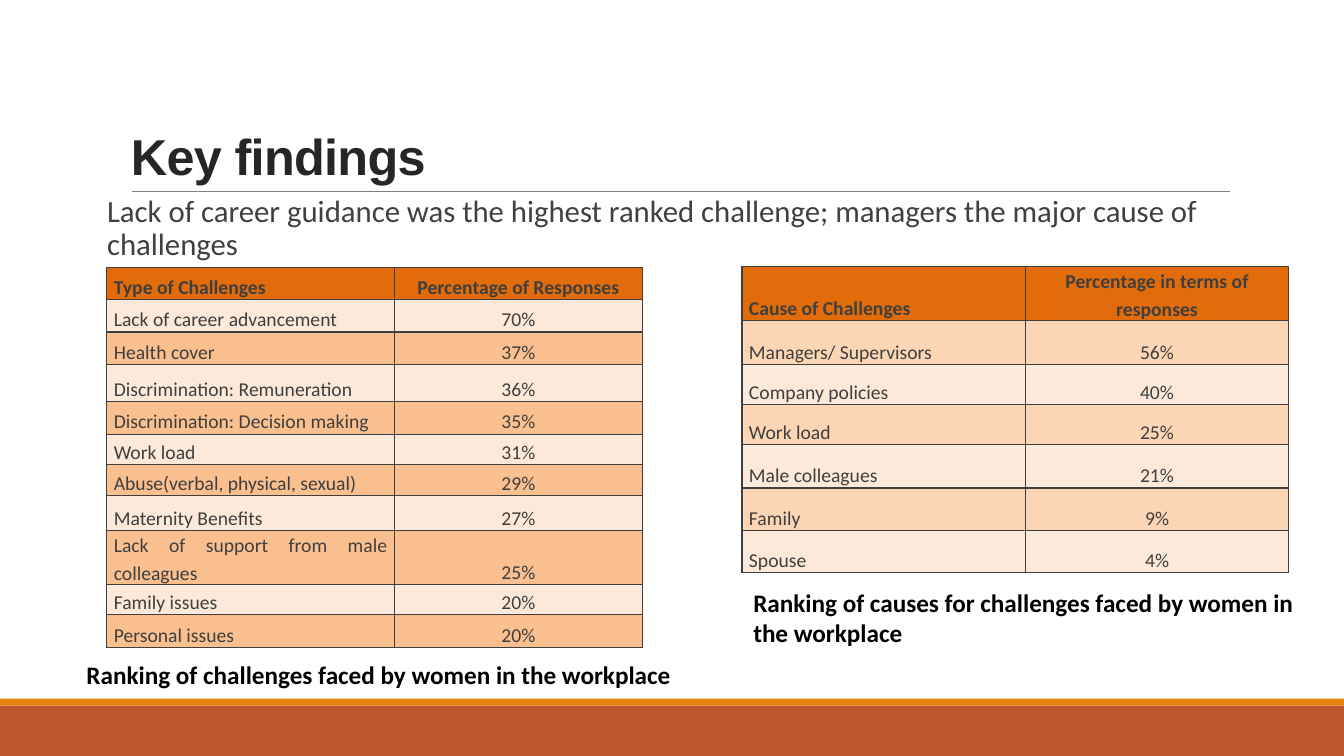
from dataclasses import dataclass

from lxml import etree
from pptx import Presentation
from pptx.dml.color import RGBColor
from pptx.enum.shapes import MSO_CONNECTOR, MSO_SHAPE
from pptx.enum.text import MSO_ANCHOR as ANCHOR, PP_ALIGN as ALIGN
from pptx.oxml.ns import qn
from pptx.util import Pt


@dataclass(frozen=True)
class Theme:
    heading_font: str = "Arial"
    body_font: str = "Calibri"
    title_size: float = 36
    lead_size: float = 22
    caption_size: float = 18
    cell_size: float = 14
    title: str = "262626"
    lead: str = "404040"
    caption: str = "000000"
    cell: str = "3F3F3F"
    rule: str = "808080"
    footer: str = "BD582C"
    accent: str = "E48312"
    header: str = "E26B0A"
    pale: str = "FDE9D9"
    peach: str = "FCD5B4"
    orange: str = "FABF8F"


THEME = Theme()
WIDTH, HEIGHT = 960, 540

CHALLENGES = [
    ("Type of Challenges", "Percentage of Responses", 23),
    ("Lack of career advancement", "70%", 23),
    ("Health cover", "37%", 23),
    ("Discrimination: Remuneration", "36%", 26.5),
    ("Discrimination: Decision making", "35%", 23.5),
    ("Work load", "31%", 21.5),
    ("Abuse(verbal, physical, sexual)", "29%", 22.5),
    ("Maternity Benefits", "27%", 25),
    ("Lack of support from male colleagues", "25%", 38.5),
    ("Family issues", "20%", 21.5),
    ("Personal issues", "20%", 23.5),
]
CAUSES = [
    ("Cause of Challenges", "Percentage in terms of responses", 38.5),
    ("Managers/ Supervisors", "56%", 31.5),
    ("Company policies", "40%", 28.5),
    ("Work load", "25%", 28.5),
    ("Male colleagues", "21%", 31),
    ("Family", "9%", 30.5),
    ("Spouse", "4%", 30),
]


def rgb(color):
    return RGBColor.from_string(color)


def write(tf, text, *, size, color, font=THEME.body_font, bold=False, align=ALIGN.LEFT,
          spacing=None, tracking=None, inset=(7.2, 3.6)):
    """Fill a text frame or table cell frame with one formatted paragraph."""
    tf.word_wrap = True
    tf.margin_left = tf.margin_right = Pt(inset[0])
    tf.margin_top = tf.margin_bottom = Pt(inset[1])
    p = tf.paragraphs[0]
    p.alignment = align
    if spacing:
        p.line_spacing = spacing
    r = p.add_run()
    r.text = text
    r.font.name, r.font.size, r.font.bold = font, Pt(size), bold
    r.font.color.rgb = rgb(color)
    if tracking:
        r.font._element.set("spc", str(int(tracking * 100)))


def add_text(slide, box, text, anchor=ANCHOR.TOP, **fmt):
    tf = slide.shapes.add_textbox(*map(Pt, box)).text_frame
    write(tf, text, **fmt)
    tf.vertical_anchor = anchor


def add_band(slide, box, color):
    sp = slide.shapes.add_shape(MSO_SHAPE.RECTANGLE, *map(Pt, box))
    sp.shadow.inherit = False
    sp.fill.solid()
    sp.fill.fore_color.rgb = rgb(color)
    sp.line.fill.background()


def add_footer(slide, left, top, width, height):
    stripe = 5
    add_band(slide, (left, top + stripe, width, height - stripe), THEME.footer)
    add_band(slide, (left, top, width, stripe), THEME.accent)


def add_heading(slide, left, top, width, height):
    """Title standing on a thin rule, with the lead sentence below."""
    bottom = top + height
    rule = slide.shapes.add_connector(
        MSO_CONNECTOR.STRAIGHT, Pt(left + 8), Pt(bottom), Pt(left + width), Pt(bottom))
    rule.line.color.rgb = rgb(THEME.rule)
    rule.line.width = Pt(0.5)
    etree.SubElement(rule._element.spPr, qn("a:effectLst"))
    add_text(slide, (left, top, width, height), "Key findings", ANCHOR.BOTTOM,
             size=THEME.title_size, color=THEME.title, font=THEME.heading_font,
             bold=True, spacing=0.85, tracking=-0.5)
    add_text(slide, (left - 10, bottom, 868.3, 54),
             "Lack of career guidance was the highest ranked challenge; "
             "managers the major cause of challenges",
             size=THEME.lead_size, color=THEME.lead, spacing=0.9, inset=(0, 3.6))


def add_borders(cell):
    tc_pr = cell._tc.get_or_add_tcPr()
    for i, side in enumerate(("lnL", "lnR", "lnT", "lnB")):
        ln = etree.Element(qn(f"a:{side}"), w=str(Pt(1)))
        fill = etree.SubElement(ln, qn("a:solidFill"))
        etree.SubElement(fill, qn("a:srgbClr"), val=THEME.cell)
        tc_pr.insert(i, ln)


def add_ranking(slide, left, top, widths, rows, bands):
    """Two-column table; body rows alternate between the two band colours."""
    height = sum(row[-1] for row in rows)
    table = slide.shapes.add_table(len(rows), len(widths), Pt(left), Pt(top),
                                   Pt(sum(widths)), Pt(height)).table
    for column, width in zip(table.columns, widths):
        column.width = Pt(width)
    for i, (*texts, row_height) in enumerate(rows):
        table.rows[i].height = Pt(row_height)
        color = bands[(i - 1) % 2] if i else THEME.header
        for j, (text, align) in enumerate(zip(texts, (ALIGN.JUSTIFY, ALIGN.CENTER))):
            cell = table.cell(i, j)
            write(cell.text_frame, text, size=THEME.cell_size, color=THEME.cell,
                  bold=i == 0, align=align, spacing=1.15)
            cell.margin_left = cell.margin_right = Pt(5)
            cell.margin_top = cell.margin_bottom = 0
            cell.vertical_anchor = ANCHOR.BOTTOM
            cell.fill.solid()
            cell.fill.fore_color.rgb = rgb(color)
            add_borders(cell)


def add_caption(slide, box, text):
    add_text(slide, box, text, size=THEME.caption_size, color=THEME.caption, bold=True)


def main():
    prs = Presentation()
    prs.slide_width, prs.slide_height = Pt(WIDTH), Pt(HEIGHT)
    slide = prs.slides.add_slide(prs.slide_layouts[6])
    add_footer(slide, 0, 499, WIDTH, 41)
    add_heading(slide, 86.5, 22.5, 792, 114)
    add_caption(slide, (54.7, 467.5, 806, 29),
                "Ranking of challenges faced by women in the workplace")
    add_caption(slide, (531, 416, 402, 51),
                "Ranking of causes for challenges faced by women in the workplace")
    add_ranking(slide, 530, 190.5, (202.5, 188), CAUSES, (THEME.peach, THEME.pale))
    add_ranking(slide, 76.3, 191.2, (205.4, 177.2), CHALLENGES, (THEME.pale, THEME.orange))
    prs.save("out.pptx")


if __name__ == "__main__":
    main()
